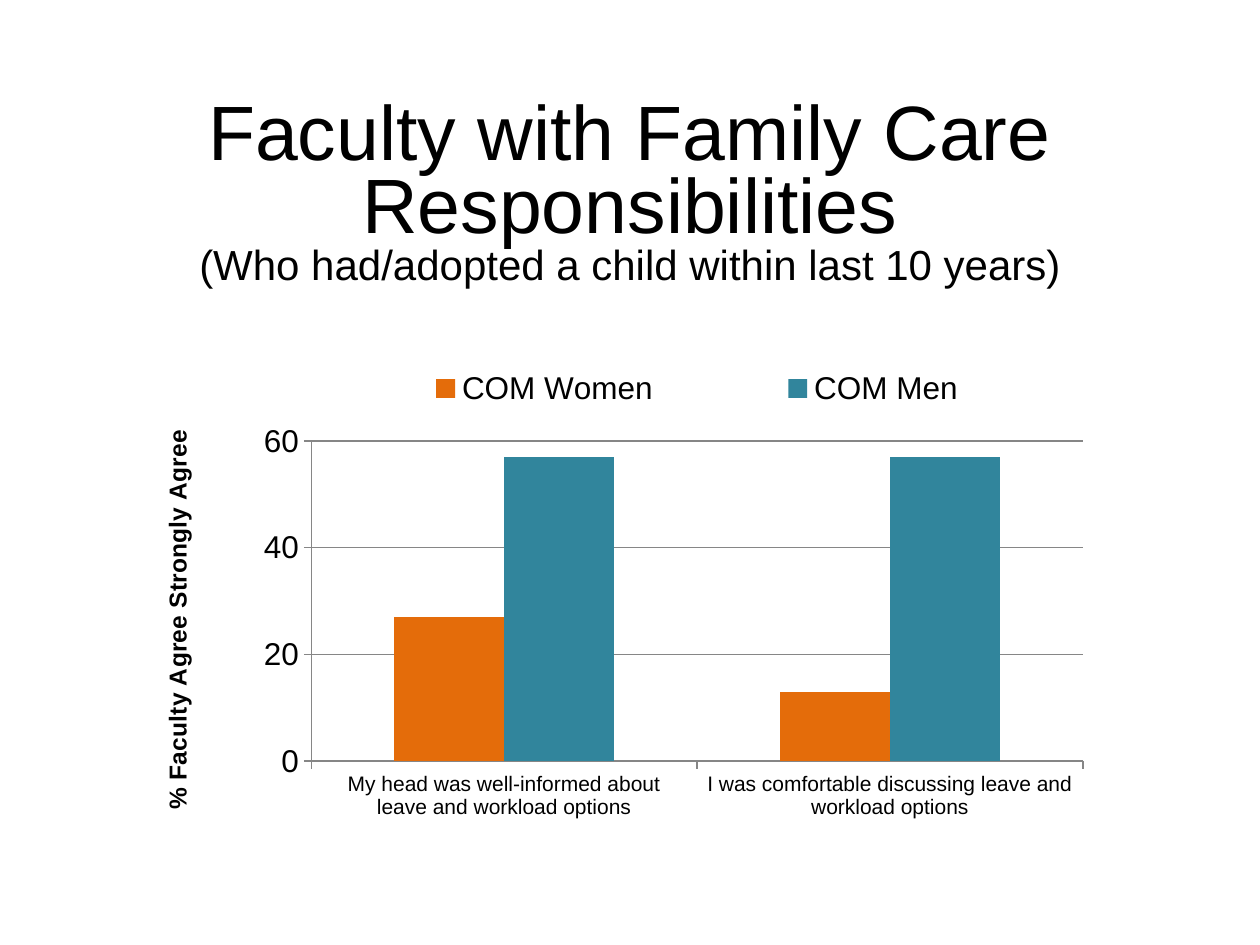
from dataclasses import dataclass

from lxml import etree
from pptx import Presentation
from pptx.chart.data import CategoryChartData
from pptx.dml.color import RGBColor
from pptx.enum.chart import XL_CHART_TYPE, XL_LEGEND_POSITION, XL_TICK_MARK
from pptx.enum.text import MSO_ANCHOR, PP_ALIGN
from pptx.oxml.ns import qn
from pptx.util import Emu, Pt

COLUMNS = XL_CHART_TYPE.COLUMN_CLUSTERED
LEGEND_TOP = XL_LEGEND_POSITION.TOP
TICK_OUTSIDE = XL_TICK_MARK.OUTSIDE
MIDDLE = MSO_ANCHOR.MIDDLE
CENTER = PP_ALIGN.CENTER

PX = 914400 / 126
FONT = "Arial"
COLORS = {"text": "000000", "line": "868686", "women": "E46C0A", "men": "31859C"}


@dataclass
class Series:
    name: str
    values: tuple[int, ...]
    color: str


CATEGORIES = (
    "My head was well-informed about leave and workload options",
    "I was comfortable discussing leave and workload options",
)
SERIES = (
    Series("COM Women", (27, 13), "women"),
    Series("COM Men", (57, 57), "men"),
)


def px(length: int) -> Emu:
    return Emu(round(length * PX))


def color(name: str) -> RGBColor:
    return RGBColor.from_string(COLORS[name])


def format_font(font, size: int, bold: bool = False) -> None:
    font.name = FONT
    font.size = Pt(size)
    font.bold = bold
    font.color.rgb = color("text")


def add_span(para, text: str, size: int, bold: bool = False) -> None:
    span = para.add_run()
    span.text = text
    format_font(span.font, size, bold)


def place(parent, index: int, target: str = "", **fractions: float) -> None:
    for old in parent.findall(qn("c:layout")):
        parent.remove(old)
    layout = etree.Element(qn("c:layout"))
    manual = etree.SubElement(layout, qn("c:manualLayout"))
    if target:
        etree.SubElement(manual, qn("c:layoutTarget")).set("val", target)
    for mode in ("xMode", "yMode"):
        etree.SubElement(manual, qn(f"c:{mode}")).set("val", "edge")
    for name, value in fractions.items():
        etree.SubElement(manual, qn(f"c:{name}")).set("val", str(value))
    parent.insert(index, layout)


def fill_title(page) -> None:
    box = page.shapes.title
    box.left, box.top, box.width, box.height = px(63), px(116), px(1134), px(158)
    frame = box.text_frame
    frame.word_wrap = True
    frame.vertical_anchor = MIDDLE
    para = frame.paragraphs[0]
    para.alignment = CENTER
    para.line_spacing = 0.8
    add_span(para, "Faculty with Family Care Responsibilities", 44)
    para.add_line_break()
    add_span(para, "(Who had/adopted a child within last 10 years)", 24)


def format_axis(axis, size: int) -> None:
    format_font(axis.tick_labels.font, size)
    axis.major_tick_mark = TICK_OUTSIDE
    axis.format.line.color.rgb = color("line")


def add_survey_chart(page) -> None:
    data = CategoryChartData(number_format="General")
    data.categories = CATEGORIES
    for series in SERIES:
        data.add_series(series.name, series.values)
    chart = page.shapes.add_chart(
        COLUMNS, px(126), px(357), px(1029), px(525), data
    ).chart
    format_font(chart.font, 18)
    chart.has_title = False

    plot = chart.plots[0]
    plot.gap_width = 150
    plot.overlap = 0
    plot.vary_by_categories = False
    for drawn, series in zip(plot.series, SERIES):
        drawn.format.fill.solid()
        drawn.format.fill.fore_color.rgb = color(series.color)

    format_axis(chart.category_axis, 12)
    values = chart.value_axis
    format_axis(values, 18)
    values.minimum_scale = 0
    values.maximum_scale = 60
    values.major_unit = 20
    values.has_major_gridlines = True
    values.major_gridlines.format.line.color.rgb = color("line")
    title = values.axis_title
    add_span(title.text_frame.paragraphs[0], "% Faculty Agree Strongly Agree", 14, True)

    chart.has_legend = True
    legend = chart.legend
    legend.position = LEGEND_TOP
    legend.include_in_layout = False
    format_font(legend.font, 18)

    plot_area = chart.element.find(".//" + qn("c:plotArea"))
    place(plot_area, 0, "inner", x=0.18, y=0.16, w=0.75, h=0.61)
    place(title.element if hasattr(title, "element") else title._element, 1, x=0.03, y=0.13)
    place(chart.element.find(".//" + qn("c:legend")), 1, x=0.18, y=0.01, w=0.75, h=0.1)


def main() -> None:
    deck = Presentation()
    deck.slide_width, deck.slide_height = px(1260), px(945)
    page = deck.slides.add_slide(deck.slide_layouts[5])
    fill_title(page)
    add_survey_chart(page)
    deck.save("out.pptx")


if __name__ == "__main__":
    main()
